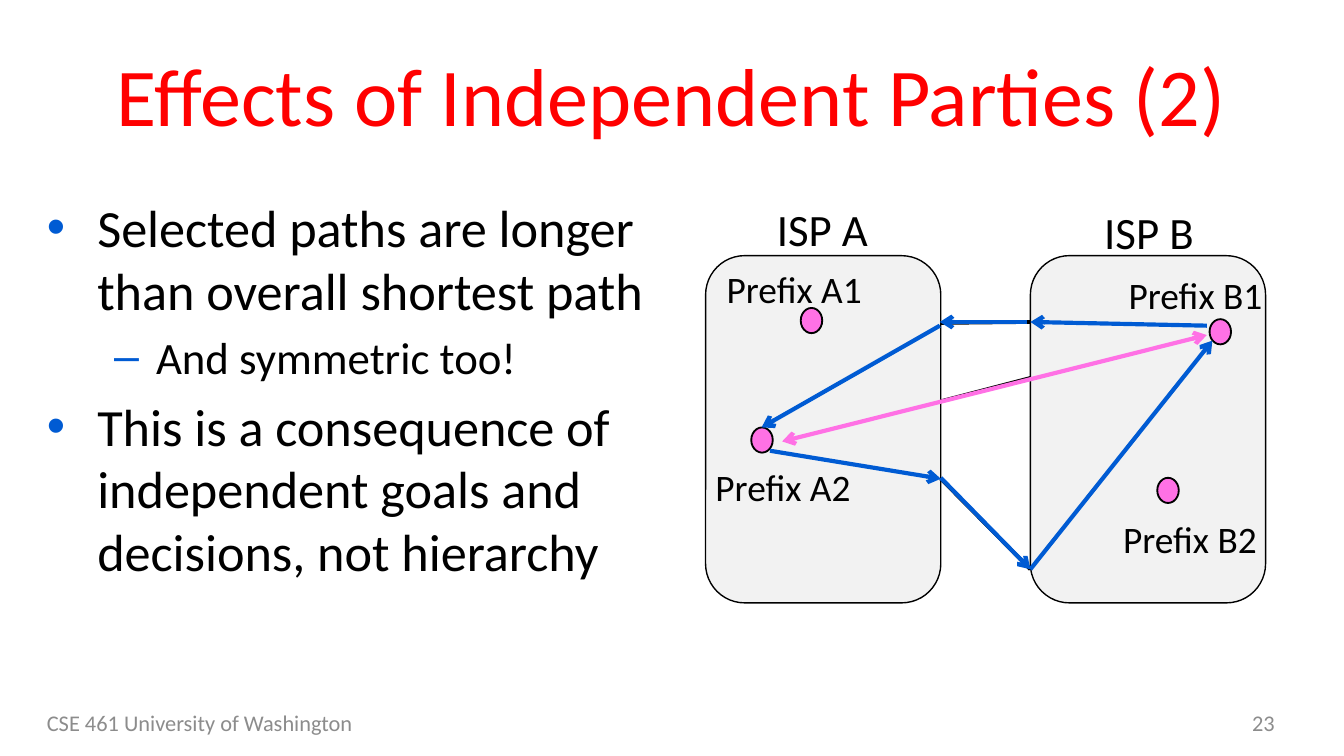
from lxml.etree import SubElement as Sub
from pptx import Presentation
from pptx.dml.color import RGBColor
from pptx.enum.shapes import MSO_CONNECTOR as Link, MSO_SHAPE as Shape
from pptx.enum.text import MSO_ANCHOR as Anchor, PP_ALIGN as Align
from pptx.oxml.ns import qn
from pptx.util import Pt

BLACK, BLUE, PINK, RED = "000000", "005BD3", "FF71E5", "FF0000"
PALE, GREY = "F2F2F2", "8C8C8C"


def paint(color, tone):
    """Set a colour format's target to a hex tone."""
    color.rgb = RGBColor.from_string(tone)


def style(para, text, size, tone=BLACK, align=Align.LEFT):
    """Fill a paragraph and set its font."""
    para.text, para.alignment = text, align
    para.font.name, para.font.size = "Calibri", Pt(size)
    paint(para.font.color, tone)


def frame(slide, box, anchor=Anchor.MIDDLE, inset=True, wrap=True):
    """Add a text box and return its text frame."""
    tf = slide.shapes.add_textbox(*map(Pt, box)).text_frame
    tf.word_wrap, tf.vertical_anchor = wrap, anchor
    if not inset:
        tf.margin_left = tf.margin_right = tf.margin_top = tf.margin_bottom = 0
    return tf


def line(slide, text, box, size, tone, align):
    """Add one line of text, centred vertically in its box."""
    style(frame(slide, box).paragraphs[0], text, size, tone, align)


def bullet(para, mark, left, hang):
    """Give a paragraph a blue hanging bullet."""
    props = para._p.get_or_add_pPr()
    props.set("marL", str(Pt(left)))
    props.set("indent", str(-Pt(hang)))
    Sub(Sub(props, qn("a:buClr")), qn("a:srgbClr")).set("val", BLUE)
    Sub(props, qn("a:buFont")).set("typeface", "Arial")
    Sub(props, qn("a:buChar")).set("char", mark)


def body(slide, box, items):
    """Write the two-level bullet list."""
    tf = frame(slide, box, Anchor.TOP)
    levels = [("•", 27, 27, 28), ("–", 58.5, 22.5, 24)]
    for i, (level, text) in enumerate(items):
        para = tf.add_paragraph() if i else tf.paragraphs[0]
        mark, left, hang, size = levels[level]
        style(para, text, size)
        para.level, para.space_before = level, Pt(size * 0.2)
        bullet(para, mark, left, hang)


def solid(slide, kind, box, fill, width):
    """Add a filled shape with a black outline."""
    shape = slide.shapes.add_shape(kind, *map(Pt, box))
    shape.shadow.inherit = False
    shape.fill.solid()
    paint(shape.fill.fore_color, fill)
    paint(shape.line.color, BLACK)
    shape.line.width = Pt(width)


def route(slide, ends, tone, width, *tips):
    """Draw a straight line with arrowheads at the named tips."""
    link = slide.shapes.add_connector(Link.STRAIGHT, *map(Pt, ends))
    paint(link.line.color, tone)
    link.line.width = Pt(width)
    Sub(link._element.spPr, qn("a:effectLst"))
    for tip in tips:
        Sub(link.line._get_or_add_ln(), qn("a:" + tip)).set("type", "arrow")


def network(slide, left, top):
    """Draw both providers, their prefixes and the paths between them."""
    def ends(x1, y1, x2, y2):
        return left + x1, top + y1, left + x2, top + y2

    for x in (0, 174):
        solid(slide, Shape.ROUNDED_RECTANGLE, (left + x, top + 36, 126, 186), PALE, 0.75)
    for x, y in [(51, 64), (24.5, 128), (270, 70), (242, 155)]:
        solid(slide, Shape.OVAL, (left + x, top + y, 11.5, 13.5), PINK, 1)
    labels = [("ISP A", 38, 7, 49, 24), ("ISP B", 213, 8.5, 49, 24),
              ("Prefix A1", 11, 41.5, 73, 20), ("Prefix A2", 5, 147.5, 73, 20),
              ("Prefix B1", 226, 45, 73, 20), ("Prefix B2", 223, 175.5, 73, 20)]
    for text, x, y, wide, size in labels:
        box = left + x, top + y, wide, size * 1.22
        tf = frame(slide, box, Anchor.TOP, inset=False, wrap=False)
        style(tf.paragraphs[0], text, size, align=Align.CENTER)
    for spot in [(126, 155.5, 174, 204), (126, 72, 174, 71.5), (126, 114, 174, 101.5)]:
        route(slide, ends(*spot), BLACK, 2)
    hops = [(34.5, 140.5, 126, 155.5), (126, 155, 174, 204), (174, 204, 271.5, 81.5),
            (268.5, 73.5, 174, 71.5), (172, 71.5, 125.5, 71.5), (125.5, 73.5, 30, 128)]
    for hop in hops:
        route(slide, ends(*hop), BLUE, 2.25, "tailEnd")
    route(slide, ends(268.5, 78.5, 41, 135.5), PINK, 2.25, "headEnd", "tailEnd")


def main():
    """Build and save the slide."""
    deck = Presentation()
    deck.slide_width, deck.slide_height = Pt(720), Pt(405)
    slide = deck.slides.add_slide(deck.slide_layouts[6])
    line(slide, "CSE 461 University of Washington", (18, 376.5, 228, 21.5), 12, GREY, Align.LEFT)
    line(slide, "23", (522, 376.5, 168, 21.5), 12, GREY, Align.RIGHT)
    line(slide, "Effects of Independent Parties (2)", (18, 16.5, 684, 67.5), 44, RED, Align.CENTER)
    body(slide, (18, 101, 342, 264), [
        (0, "Selected paths are longer than overall shortest path"),
        (1, "And symmetric too!"),
        (0, "This is a consequence of independent goals and decisions, not hierarchy")])
    network(slide, 378, 101)
    deck.save("out.pptx")


if __name__ == "__main__":
    main()
